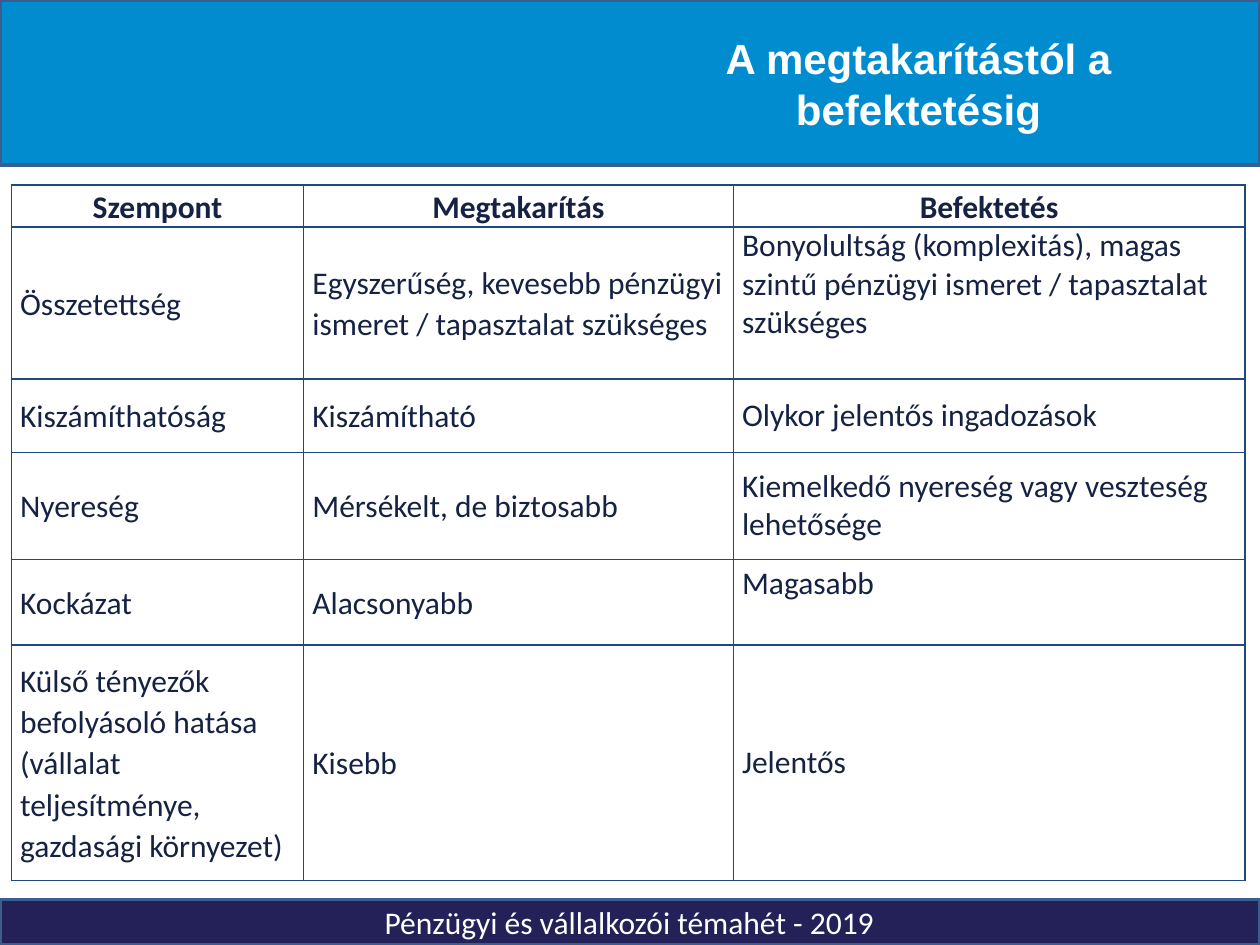
from lxml import etree
from pptx import Presentation
from pptx.dml.color import RGBColor
from pptx.enum.shapes import MSO_SHAPE
from pptx.enum.text import MSO_ANCHOR, PP_ALIGN
from pptx.oxml.ns import qn
from pptx.util import Inches, Pt

RECT = MSO_SHAPE.RECTANGLE
TOP, MIDDLE = MSO_ANCHOR.TOP, MSO_ANCHOR.MIDDLE
LEFT, CENTER = PP_ALIGN.LEFT, PP_ALIGN.CENTER
BLUE = RGBColor(0x00, 0x8C, 0xCF)
NAVY = RGBColor(0x23, 0x21, 0x57)
BAR_LINE = RGBColor(0x3A, 0x5F, 0x8C)
GRID = RGBColor(0x1F, 0x49, 0x7D)
INK = RGBColor(0x15, 0x22, 0x43)
WHITE = RGBColor(0xFF, 0xFF, 0xFF)


def style(p, font, size, color, bold=False, align=CENTER):
    p.alignment = align
    for r in p.runs:
        r.font.name = font
        r.font.size = Pt(size)
        r.font.bold = bold
        r.font.color.rgb = color


def add_borders(cell, color):
    tcPr = cell._tc.get_or_add_tcPr()
    for i, side in enumerate(("a:lnL", "a:lnR", "a:lnT", "a:lnB")):
        ln = etree.Element(qn(side), w=str(Pt(1)))
        fill = etree.SubElement(ln, qn("a:solidFill"))
        etree.SubElement(fill, qn("a:srgbClr"), val=str(color))
        tcPr.insert(i, ln)


prs = Presentation()
prs.slide_width, prs.slide_height = Inches(10), Inches(7.5)
s = prs.slides.add_slide(prs.slide_layouts[5])

# Header and footer bars
for top, height, color in ((0, 1.31, BLUE), (7.14, 0.36, NAVY)):
    bar = s.shapes.add_shape(RECT, 0, Inches(top), Inches(10), Inches(height))
    bar.shadow.inherit = False
    bar.fill.solid()
    bar.fill.fore_color.rgb = color
    bar.line.color.rgb = BAR_LINE
    bar.line.width = Pt(2)

# Footer text
footer = s.shapes.add_textbox(Inches(2.95), Inches(7.12), Inches(4.09), Inches(0.4))
tf = footer.text_frame
tf.word_wrap = True
tf.text = "Pénzügyi és vállalkozói témahét - 2019"
style(tf.paragraphs[0], "Calibri", 18, WHITE)

# Title, brought in front of the header bar
title = s.shapes.title
title.left, title.top = Inches(4.69), 0
title.width, title.height = Inches(5.2), Inches(1.32)
s.shapes._spTree.append(title._element)
tf = title.text_frame
tf.text = "A megtakarítástól a befektetésig"
tf.vertical_anchor = MIDDLE
style(tf.paragraphs[0], "Arial", 24, WHITE, bold=True)

# Comparison table
rows = [
    ("Szempont", "Megtakarítás", "Befektetés"),
    ("Összetettség",
     "Egyszerűség, kevesebb pénzügyi ismeret / tapasztalat szükséges",
     "Bonyolultság (komplexitás), magas szintű pénzügyi ismeret / tapasztalat szükséges"),
    ("Kiszámíthatóság", "Kiszámítható", "Olykor jelentős ingadozások"),
    ("Nyereség", "Mérsékelt, de biztosabb",
     "Kiemelkedő nyereség vagy veszteség lehetősége"),
    ("Kockázat", "Alacsonyabb", "Magasabb"),
    ("Külső tényezők befolyásoló hatása\n(vállalat teljesítménye, gazdasági környezet)",
     "Kisebb", "Jelentős"),
]
col_widths = (2.32, 3.41, 4.06)
row_heights = (0.33, 1.21, 0.58, 0.85, 0.68, 1.87)
top_margins = {(1, 2): 0, (4, 2): 0.04}  # cells whose text sits at the top

frame = s.shapes.add_table(len(rows), len(col_widths), Inches(0.09), Inches(1.47),
                           Inches(sum(col_widths)), Inches(sum(row_heights)))
table = frame.table
table.horz_banding = False
for col, width in zip(table.columns, col_widths):
    col.width = Inches(width)
for row, height in zip(table.rows, row_heights):
    row.height = Inches(height)

for i, texts in enumerate(rows):
    header = i == 0
    for j, text in enumerate(texts):
        cell = table.cell(i, j)
        cell.text = text
        cell.fill.background()
        cell.margin_left = cell.margin_right = Inches(0.07)
        cell.margin_top = Inches(top_margins.get((i, j), 0))
        cell.margin_bottom = 0
        cell.vertical_anchor = TOP if (i, j) in top_margins else MIDDLE
        add_borders(cell, GRID)
        for p in cell.text_frame.paragraphs:
            p.line_spacing = 1.07 if header or j < 2 else 1.0
            style(p, "Calibri", 18, INK, bold=header, align=CENTER if header else LEFT)

prs.save("out.pptx")
